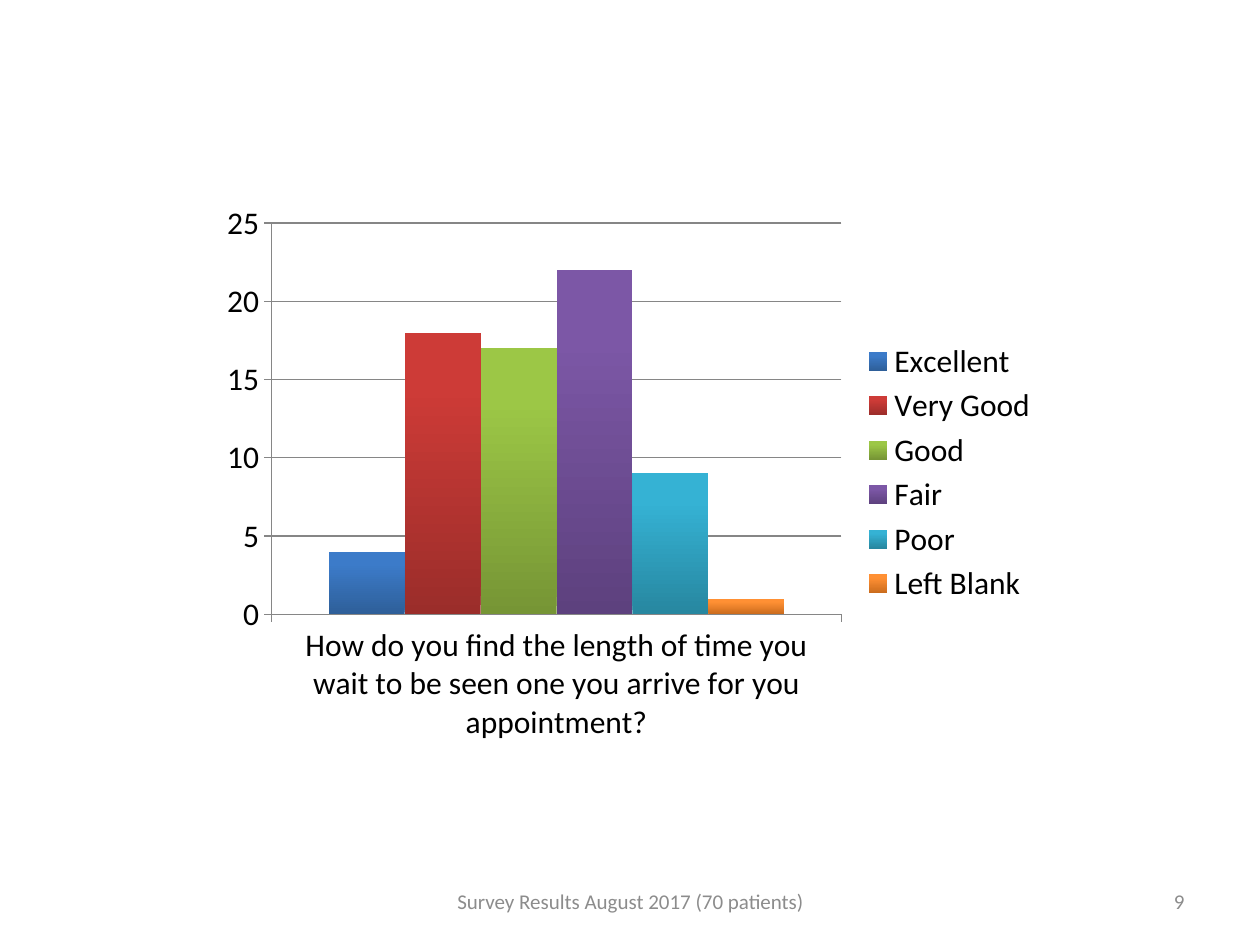
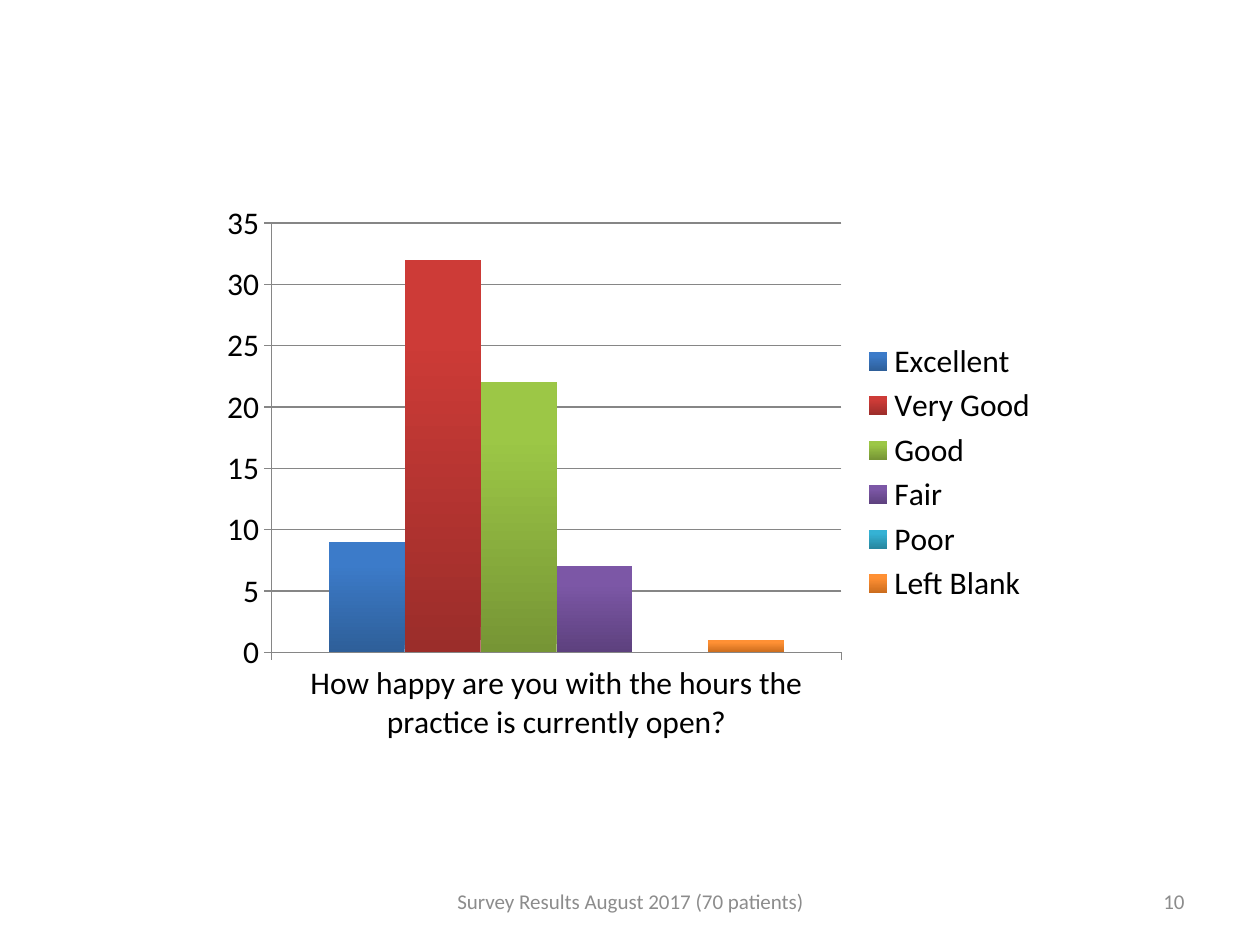
from pptx import Presentation
from pptx.chart.data import CategoryChartData
from pptx.dml.color import RGBColor
from pptx.enum.chart import XL_CHART_TYPE, XL_LEGEND_POSITION, XL_TICK_MARK
from pptx.enum.text import MSO_ANCHOR, PP_ALIGN
from pptx.util import Inches, Pt

# Content
FOOTER = "Survey Results August 2017 (70 patients)"
RATINGS = ["Excellent", "Very Good", "Good", "Fair", "Poor", "Left Blank"]
SLIDES = [
    {"page": 9, "top": 25, "votes": [4, 18, 17, 22, 9, 1],
     "ask": "How do you find the length of time you wait to be seen "
            "one you arrive for you appointment?"},
    {"page": 10, "top": 35, "votes": [9, 32, 22, 7, 0, 1],
     "ask": "How happy are you with the hours the practice is currently open?"},
]

# Shared style
FONT = "Calibri"
COLORS = {"text": "000000", "foot": "8C8C8C", "line": "868686", "back": "FFFFFF"}
BARS = {  # shade at the foot of the bar, shade at its top
    "Excellent": ("2E5F99", "3C7BC9"),
    "Very Good": ("9B2D2A", "CD3B37"),
    "Good": ("769535", "9CC746"),
    "Fair": ("5D417E", "7C57A6"),
    "Poor": ("2787A0", "35B2D4"),
    "Left Blank": ("CB6C1D", "FF9034"),
}


def rgb(name):
    return RGBColor.from_string(COLORS.get(name, name))


def style(font, size, color):
    font.name, font.size = FONT, Pt(size)
    font.color.rgb = rgb(color)


def add_foot(slide, text, left, width, align):
    box = slide.shapes.add_textbox(Inches(left), Inches(6.95), Inches(width), Inches(0.4))
    frame = box.text_frame
    frame.text = text
    frame.word_wrap = True
    frame.vertical_anchor = MSO_ANCHOR.MIDDLE
    line = frame.paragraphs[0]
    line.alignment = align
    style(line.runs[0].font, 12, "foot")


def add_bars(slide, item):
    data = CategoryChartData()
    data.categories = [item["ask"]]
    for name, vote in zip(RATINGS, item["votes"]):
        data.add_series(name, [vote])
    chart = slide.shapes.add_chart(
        XL_CHART_TYPE.COLUMN_CLUSTERED, Inches(1.67), Inches(1.53),
        Inches(6.67), Inches(4.44), data).chart
    chart.has_title = False
    style(chart.font, 18, "text")
    chart.has_legend = True
    chart.legend.position = XL_LEGEND_POSITION.RIGHT
    chart.legend.include_in_layout = False

    # Axes
    scale = chart.value_axis
    scale.minimum_scale, scale.maximum_scale, scale.major_unit = 0, item["top"], 5
    scale.has_major_gridlines = True
    for axis in (scale, chart.category_axis):
        axis.major_tick_mark = XL_TICK_MARK.OUTSIDE
        axis.minor_tick_mark = XL_TICK_MARK.NONE
    for part in (scale, chart.category_axis, scale.major_gridlines):
        part.format.line.color.rgb = rgb("line")
        part.format.line.width = Pt(0.75)

    # Bars shaded from foot to top
    plot = chart.plots[0]
    plot.gap_width, plot.overlap, plot.vary_by_categories = 150, 0, False
    for bar in plot.series:
        bar.invert_if_negative = False
        fill = bar.format.fill
        fill.gradient()
        fill.gradient_angle = 90
        for stop, shade, place in zip(fill.gradient_stops, BARS[bar.name], (0, 0.8)):
            stop.color.rgb = rgb(shade)
            stop.position = place


def main():
    deck = Presentation()
    deck.slide_width, deck.slide_height = Inches(10), Inches(7.5)
    for item in SLIDES:
        slide = deck.slides.add_slide(deck.slide_layouts[6])
        slide.background.fill.solid()
        slide.background.fill.fore_color.rgb = rgb("back")
        add_bars(slide, item)
        add_foot(slide, str(item["page"]), 7.17, 2.33, PP_ALIGN.RIGHT)
        add_foot(slide, FOOTER, 3.42, 3.17, PP_ALIGN.CENTER)
    deck.save("out.pptx")


if __name__ == "__main__":
    main()
